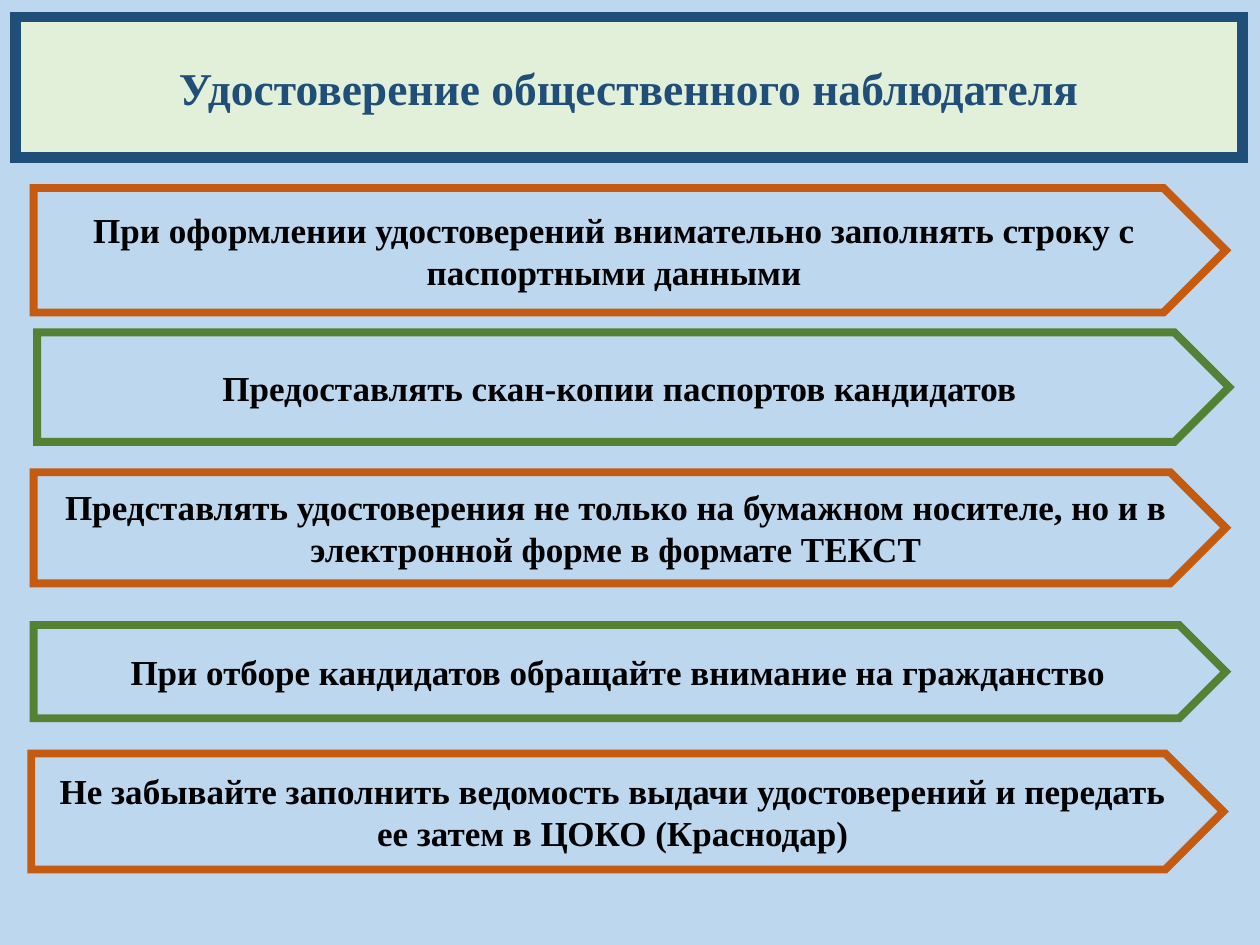
from dataclasses import dataclass

import pptx
import pptx.dml.color
import pptx.enum.shapes
import pptx.enum.text
import pptx.oxml.ns
import pptx.util
from lxml import etree
from pptx.util import Cm, Pt

FONT = "Times New Roman"
SKY, MINT, NAVY = "BDD7EE", "E2F0D9", "1F4E79"
ORANGE, GREEN, BLACK = "C55A11", "548235", "000000"
ARROW_WIDTH = 24.03


@dataclass
class Arrow:
    """One recommendation; lengths in centimetres."""
    left: float
    top: float
    height: float
    color: str
    text: str


ARROWS = [
    Arrow(0.68, 3.79, 2.51, ORANGE,
          "При оформлении удостоверений внимательно заполнять строку с паспортными данными"),
    Arrow(0.75, 6.7, 2.21, GREEN,
          "Предоставлять скан-копии паспортов кандидатов"),
    Arrow(0.68, 9.52, 2.24, ORANGE,
          "Представлять удостоверения не только на бумажном носителе, "
          "но и в электронной форме в формате ТЕКСТ"),
    Arrow(0.68, 12.6, 1.88, GREEN,
          "При отборе кандидатов обращайте внимание на гражданство"),
    Arrow(0.63, 15.19, 2.34, ORANGE,
          "Не забывайте заполнить ведомость выдачи удостоверений "
          "и передать ее затем в ЦОКО (Краснодар)"),
]


def rgb(color: str) -> pptx.dml.color.RGBColor:
    return pptx.dml.color.RGBColor.from_string(color)


def set_outline(sp, color: str, width: float) -> None:
    """Solid outline with sharp corners."""
    sp.line.color.rgb = rgb(color)
    sp.line.width = Pt(width)
    ln = sp.line.fill._xPr
    etree.SubElement(ln, pptx.oxml.ns.qn("a:miter"), lim="800000")


def set_text(sp, text: str, size: float, color: str) -> None:
    """Bold text centred both ways."""
    tf = sp.text_frame
    tf.text = text
    tf.word_wrap = True
    tf.auto_size = pptx.enum.text.MSO_AUTO_SIZE.NONE
    tf.vertical_anchor = pptx.enum.text.MSO_ANCHOR.MIDDLE
    p = tf.paragraphs[0]
    p.alignment = pptx.enum.text.PP_ALIGN.CENTER
    font = p.runs[0].font
    font.name, font.size, font.bold = FONT, Pt(size), True
    font.color.rgb = rgb(color)


def format_title(sp, text: str) -> None:
    sp.left, sp.top, sp.width, sp.height = Cm(0.31), Cm(0.34), Cm(24.74), Cm(2.84)
    sp.fill.solid()
    sp.fill.fore_color.rgb = rgb(MINT)
    set_outline(sp, NAVY, 6)
    set_text(sp, text, 26, NAVY)


def draw_arrow(s, arrow: Arrow) -> None:
    sp = s.shapes.add_shape(
        pptx.enum.shapes.MSO_SHAPE.PENTAGON,
        Cm(arrow.left), Cm(arrow.top), Cm(ARROW_WIDTH), Cm(arrow.height))
    sp.shadow.inherit = False
    sp.fill.background()
    set_outline(sp, arrow.color, 4.5)
    set_text(sp, arrow.text, 20, BLACK)


def main() -> None:
    prs = pptx.Presentation()
    prs.slide_width, prs.slide_height = Cm(25.4), Cm(19.05)
    s = prs.slides.add_slide(prs.slide_layouts.get_by_name("Title Only"))

    # Background
    s.background.fill.solid()
    s.background.fill.fore_color.rgb = rgb(SKY)

    # Heading
    format_title(s.shapes.title, "Удостоверение общественного наблюдателя")

    # Recommendations
    for arrow in ARROWS:
        draw_arrow(s, arrow)

    prs.save("out.pptx")


if __name__ == "__main__":
    main()
